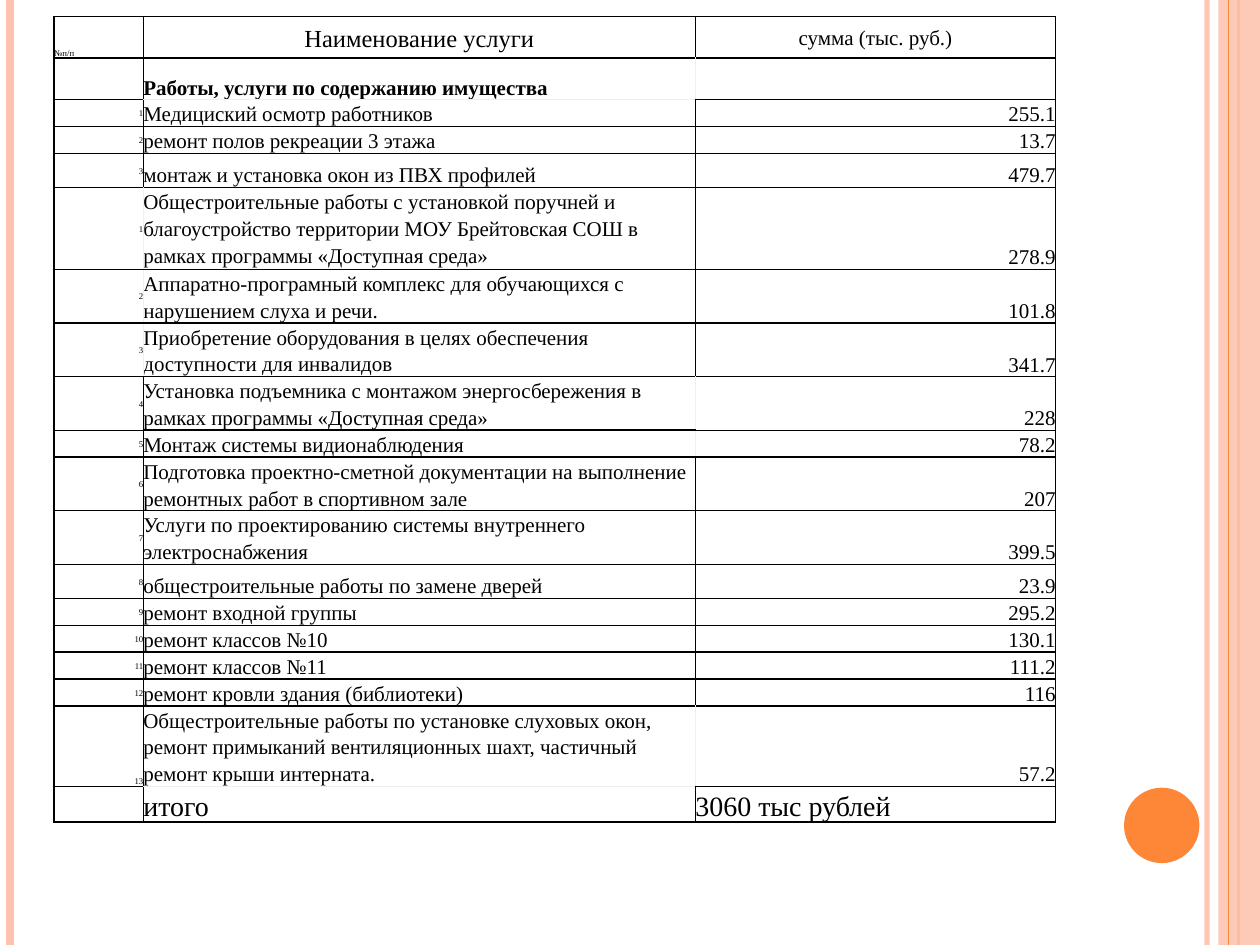
import lxml.etree
import pptx
import pptx.dml.color
import pptx.enum.shapes
import pptx.enum.text
import pptx.oxml.ns
import pptx.util

Cm, Pt = pptx.util.Cm, pptx.util.Pt
qn = pptx.oxml.ns.qn
ANCHOR, ALIGN = pptx.enum.text.MSO_ANCHOR, pptx.enum.text.PP_ALIGN
SHAPE = pptx.enum.shapes.MSO_SHAPE

COLORS = {"text": "000000", "border": "000000", "pale": "EFEFEF",
          "peach": "FEC3AE", "orange": "FE8637"}

ROWS = [
    ("№п/п", "Наименование услуги", "сумма (тыс. руб.)", 0.84),
    ("", "Работы, услуги по содержанию имущества", "", 0.84),
    ("1", "Медициский осмотр работников", "255.1", 0.36),
    ("2", "ремонт полов рекреации 3 этажа", "13.7", 0.36),
    ("3", "монтаж и установка окон из ПВХ профилей", "479.7", 0.69),
    ("1", "Общестроительные работы с установкой поручней и благоустройство территории "
     "МОУ Брейтовская СОШ в рамках программы «Доступная среда»", "278.9", 1.65),
    ("2", "Аппаратно-програмный комплекс для обучающихся с нарушением слуха и речи.",
     "101.8", 1.02),
    ("3", "Приобретение оборудования в целях обеспечения доступности для инвалидов",
     "341.7", 1.02),
    ("4", "Установка подъемника с монтажом энергосбережения в рамках программы "
     "«Доступная среда»", "228", 1.02),
    ("5", "Монтаж системы видионаблюдения", "78.2", 0.36),
    ("6", "Подготовка проектно-сметной документации на выполнение ремонтных работ "
     "в спортивном зале", "207", 1.02),
    ("7", "Услуги по проектированию системы внутреннего электроснабжения", "399.5", 0.69),
    ("8", "общестроительные работы по замене дверей", "23.9", 0.69),
    ("9", "ремонт входной группы", "295.2", 0.36),
    ("10", "ремонт классов №10", "130.1", 0.36),
    ("11", "ремонт классов №11", "111.2", 0.36),
    ("12", "ремонт кровли здания (библиотеки)", "116", 0.36),
    ("13", "Общестроительные работы по установке слуховых окон, ремонт примыканий "
     "вентиляционных шахт, частичный ремонт крыши интерната.", "57.2", 1.35),
    ("", "итого", "3060 тыс рублей", 0.36),
]
LAST = len(ROWS) - 1
COLUMN_WIDTHS = (1.8, 11.13, 7.26)
SIZES = {(0, 1): 14, (LAST, 1): 16, (LAST, 2): 16}
ANCHORS = {(0, 0): ANCHOR.BOTTOM, (0, 1): ANCHOR.MIDDLE, (0, 2): ANCHOR.MIDDLE,
           (LAST - 1, 0): ANCHOR.BOTTOM, **{(i, 1): ANCHOR.TOP for i in range(5, 10)}}
ALIGNS = {(0, 0): ALIGN.LEFT, (0, 1): ALIGN.CENTER, (0, 2): ALIGN.CENTER,
          (LAST, 2): ALIGN.LEFT}
PALE_RIGHT = {(1, 1), (5, 0), (6, 0), (7, 0), (8, 1), (9, 1), (LAST - 1, 1)}
PALE_BELOW = {(1, 1), (LAST - 1, 1)}
THICK_BELOW = {(8, 1), (9, 1)}


class SlideBuilder:
    """Holds the text style and the current slide."""

    def __init__(self, s, font="Times New Roman", spacing=1.15):
        self.s, self.font, self.spacing = s, font, spacing

    def color(self, name):
        return pptx.dml.color.RGBColor.from_string(COLORS[name])

    def opacity(self, parent, percent):
        if percent < 100:
            clr = next(parent.iter(qn("a:srgbClr")))
            lxml.etree.SubElement(clr, qn("a:alpha"), val=str(percent * 1000))

    def vertical(self, x, color, width, opacity=100):
        line = self.s.shapes.add_connector(
            pptx.enum.shapes.MSO_CONNECTOR.STRAIGHT, Cm(x), 0, Cm(x), Cm(19.05))
        line.line.color.rgb = self.color(color)
        line.line.width = Pt(width)
        sp_pr = line._element.spPr
        self.opacity(sp_pr, opacity)
        lxml.etree.SubElement(sp_pr, qn("a:effectLst"))

    def shape(self, kind, x, y, w, h, color, opacity=100):
        sp = self.s.shapes.add_shape(kind, Cm(x), Cm(y), Cm(w), Cm(h))
        sp.shadow.inherit = False
        sp.fill.solid()
        sp.fill.fore_color.rgb = self.color(color)
        sp.line.fill.background()
        self.opacity(sp._element.spPr, opacity)

    def borders(self, cell, i, j):
        edges = {"L": (PALE_RIGHT, (i, j - 1)), "R": (PALE_RIGHT, (i, j)),
                 "T": (PALE_BELOW, (i - 1, j)), "B": (PALE_BELOW, (i, j))}
        tc_pr = cell._tc.get_or_add_tcPr()
        for side, (pale, edge) in edges.items():
            width = 1.5 if side in "TB" and edge in THICK_BELOW else 1
            ln = lxml.etree.SubElement(tc_pr, qn(f"a:ln{side}"), w=str(Pt(width)))
            fill = lxml.etree.SubElement(ln, qn("a:solidFill"))
            lxml.etree.SubElement(fill, qn("a:srgbClr"),
                                  val=COLORS["pale" if edge in pale else "border"])

    def cell(self, cell, text, i, j):
        self.borders(cell, i, j)
        cell.fill.background()
        cell.margin_left = cell.margin_right = cell.margin_top = cell.margin_bottom = 0
        cell.vertical_anchor = ANCHORS.get((i, j), ANCHOR.BOTTOM if j else ANCHOR.MIDDLE)
        size = SIZES.get((i, j), 12 if j else 5)
        p = cell.text_frame.paragraphs[0]
        p.line_spacing = self.spacing
        p.alignment = ALIGNS.get((i, j), ALIGN.LEFT if j == 1 else ALIGN.RIGHT)
        if not text:
            lxml.etree.SubElement(p._p, qn("a:endParaRPr"), sz=str(size * 100))
            return
        r = p.add_run()
        r.text = text
        r.font.name = self.font
        r.font.size = Pt(size)
        r.font.bold = (i, j) == (1, 1)
        r.font.color.rgb = self.color("text")

    def table(self, x, y, h, widths, rows):
        frame = self.s.shapes.add_table(len(rows), len(widths), Cm(x), Cm(y),
                                        Cm(sum(widths)), Cm(h))
        table = frame.table
        table.first_row = table.horz_banding = False
        for column, width in zip(table.columns, widths):
            column.width = Cm(width)
        for i, (*texts, height) in enumerate(rows):
            table.rows[i].height = Cm(height)
            for j, text in enumerate(texts):
                self.cell(table.cell(i, j), text, i, j)
        frame.height = Cm(h)


def main():
    prs = pptx.Presentation()
    prs.slide_width, prs.slide_height = Cm(25.4), Cm(19.05)
    b = SlideBuilder(prs.slides.add_slide(prs.slide_layouts[6]))
    b.vertical(24.33, "peach", 3, 93)
    b.vertical(0.2, "peach", 4.5)
    b.vertical(24.97, "orange", 1.5)
    b.shape(SHAPE.RECTANGLE, 24.56, 0, 0.84, 19.05, "peach", 87)
    b.vertical(24.77, "orange", 0.75)
    b.shape(SHAPE.OVAL, 22.66, 15.88, 1.52, 1.52, "orange")
    b.table(1.09, 0.33, 17.6, COLUMN_WIDTHS, ROWS)
    prs.save("out.pptx")


if __name__ == "__main__":
    main()
